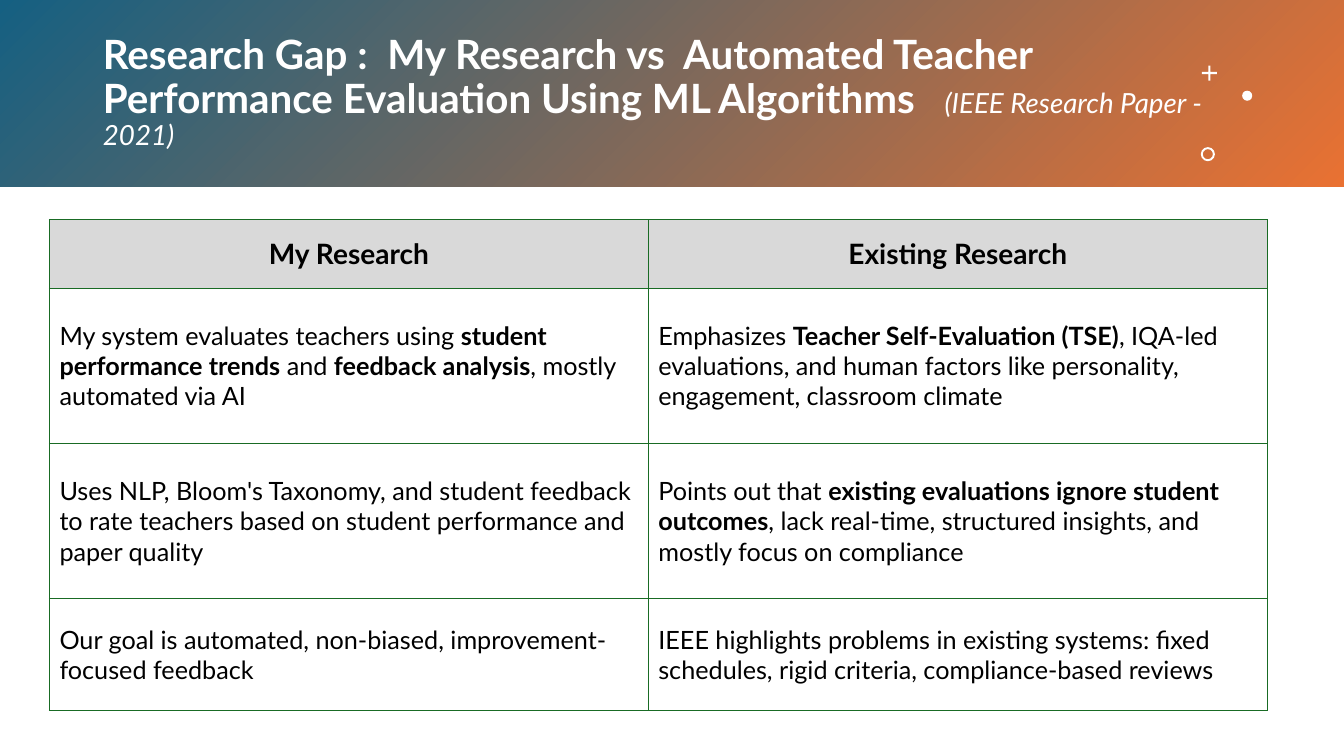
from dataclasses import dataclass

from lxml.etree import SubElement
from pptx import Presentation
from pptx.dml.color import RGBColor
from pptx.enum.shapes import MSO_SHAPE as Shape
from pptx.enum.text import MSO_ANCHOR as Anchor, MSO_AUTO_SIZE as AutoSize, PP_ALIGN as Align
from pptx.oxml.ns import qn
from pptx.util import Inches, Pt


@dataclass(frozen=True)
class Theme:
    font: str = "Lato"
    white: str = "FFFFFF"
    black: str = "000000"
    blue: str = "156082"
    orange: str = "E97132"
    green: str = "196B24"
    grey: str = "D9D9D9"
    title_size: float = 28.8
    source_size: float = 19.8
    header_size: float = 20
    body_size: float = 18
    border_width: float = 1


def add_span(para, text, *, font, size, color, bold=False, italic=False):
    span = para.add_run()
    span.text = text
    span.font.name = font
    span.font.size = Pt(size)
    span.font.color.rgb = RGBColor.from_string(color)
    span.font.bold = bold
    span.font.italic = italic


class SlideBuilder:
    def __init__(self, page, theme):
        self.page = page
        self.theme = theme

    def band(self, width, height):
        box = self.page.shapes.add_shape(Shape.RECTANGLE, 0, 0, Inches(width), Inches(height))
        box.shadow.inherit = False
        box.line.fill.background()
        box.fill.gradient()
        box.fill.gradient_angle = 315
        for stop, color in zip(box.fill.gradient_stops, (self.theme.blue, self.theme.orange)):
            stop.color.rgb = RGBColor.from_string(color)
        # Keep the band behind the title
        self.page.shapes.title.element.addprevious(box.element)

    def title(self, text, source, left, top, width, height):
        theme = self.theme
        box = self.page.shapes.title
        box.left, box.top = Inches(left), Inches(top)
        box.width, box.height = Inches(width), Inches(height)
        frame = box.text_frame
        frame.word_wrap = True
        frame.auto_size = AutoSize.NONE
        frame.vertical_anchor = Anchor.MIDDLE
        para = frame.paragraphs[0]
        para.alignment = Align.LEFT
        para.line_spacing = 0.9
        add_span(para, text, font=theme.font, size=theme.title_size, color=theme.white, bold=True)
        add_span(para, source, font=theme.font, size=theme.source_size, color=theme.white, italic=True)

    def ornament(self, kind, left, top, size, adjustment=None):
        mark = self.page.shapes.add_shape(kind, Inches(left), Inches(top), Inches(size), Inches(size))
        mark.shadow.inherit = False
        mark.fill.solid()
        mark.fill.fore_color.rgb = RGBColor.from_string(self.theme.white)
        mark.line.fill.background()
        if adjustment is not None:
            mark.adjustments[0] = adjustment

    def table(self, rows, left, top, widths, heights):
        table = self.page.shapes.add_table(
            len(rows), len(widths), Inches(left), Inches(top),
            Inches(sum(widths)), Inches(sum(heights))).table
        table.first_row = table.horz_banding = False
        for column, width in zip(table.columns, widths):
            column.width = Inches(width)
        for row, height in zip(table.rows, heights):
            row.height = Inches(height)
        for row_index, texts in enumerate(rows):
            for column_index, text in enumerate(texts):
                self.cell(table.cell(row_index, column_index), text, header=row_index == 0)

    def cell(self, cell, text, header):
        theme = self.theme
        self.borders(cell)
        cell.vertical_anchor = Anchor.MIDDLE
        if header:
            cell.fill.solid()
            cell.fill.fore_color.rgb = RGBColor.from_string(theme.grey)
        else:
            cell.fill.background()
        para = cell.text_frame.paragraphs[0]
        para.alignment = Align.CENTER if header else Align.LEFT
        # Text between ** marks is bold
        for index, part in enumerate(text.split("**")):
            add_span(para, part, font=theme.font, color=theme.black,
                     size=theme.header_size if header else theme.body_size,
                     bold=header or index % 2 == 1)

    def borders(self, cell):
        properties = cell._tc.get_or_add_tcPr()
        for side in ("a:lnL", "a:lnR", "a:lnT", "a:lnB"):
            line = SubElement(properties, qn(side), w=str(Pt(self.theme.border_width)))
            fill = SubElement(line, qn("a:solidFill"))
            SubElement(fill, qn("a:srgbClr"), val=self.theme.green)


RESEARCH_ROWS = [
    ("My Research", "Existing Research"),
    ("My system evaluates teachers using **student performance trends** and "
     "**feedback analysis**, mostly automated via AI",
     "Emphasizes **Teacher Self-Evaluation (TSE)**, IQA-led evaluations, and human factors "
     "like personality, engagement, classroom climate"),
    ("Uses NLP, Bloom's Taxonomy, and student feedback to rate teachers based on "
     "student performance and paper quality",
     "Points out that **existing evaluations ignore student outcomes**, lack real-time, "
     "structured insights, and mostly focus on compliance"),
    ("Our goal is automated, non-biased, improvement-focused feedback",
     "IEEE highlights problems in existing systems: fixed schedules, rigid criteria, "
     "compliance-based reviews"),
]


def main():
    deck = Presentation()
    deck.slide_width, deck.slide_height = Inches(13.33), Inches(7.5)
    builder = SlideBuilder(deck.slides.add_slide(deck.slide_layouts[5]), Theme())

    # Title band
    builder.band(13.33, 1.85)
    builder.title(
        "Research Gap :  My Research vs  Automated Teacher Performance Evaluation "
        "Using ML Algorithms   ",
        "(IEEE Research Paper - 2021)", 0.92, 0.33, 11.4, 1.19)

    # Ornaments
    builder.ornament(Shape.CROSS, 11.92, 0.65, 0.15, adjustment=0.43)
    builder.ornament(Shape.OVAL, 12.32, 0.9, 0.1)
    builder.ornament(Shape.DONUT, 11.91, 1.46, 0.14, adjustment=0.14)

    # Comparison table
    builder.table(RESEARCH_ROWS, 0.49, 2.18, widths=(5.94, 6.14), heights=(0.68, 1.54, 1.54, 1.11))

    deck.save("out.pptx")


if __name__ == "__main__":
    main()
